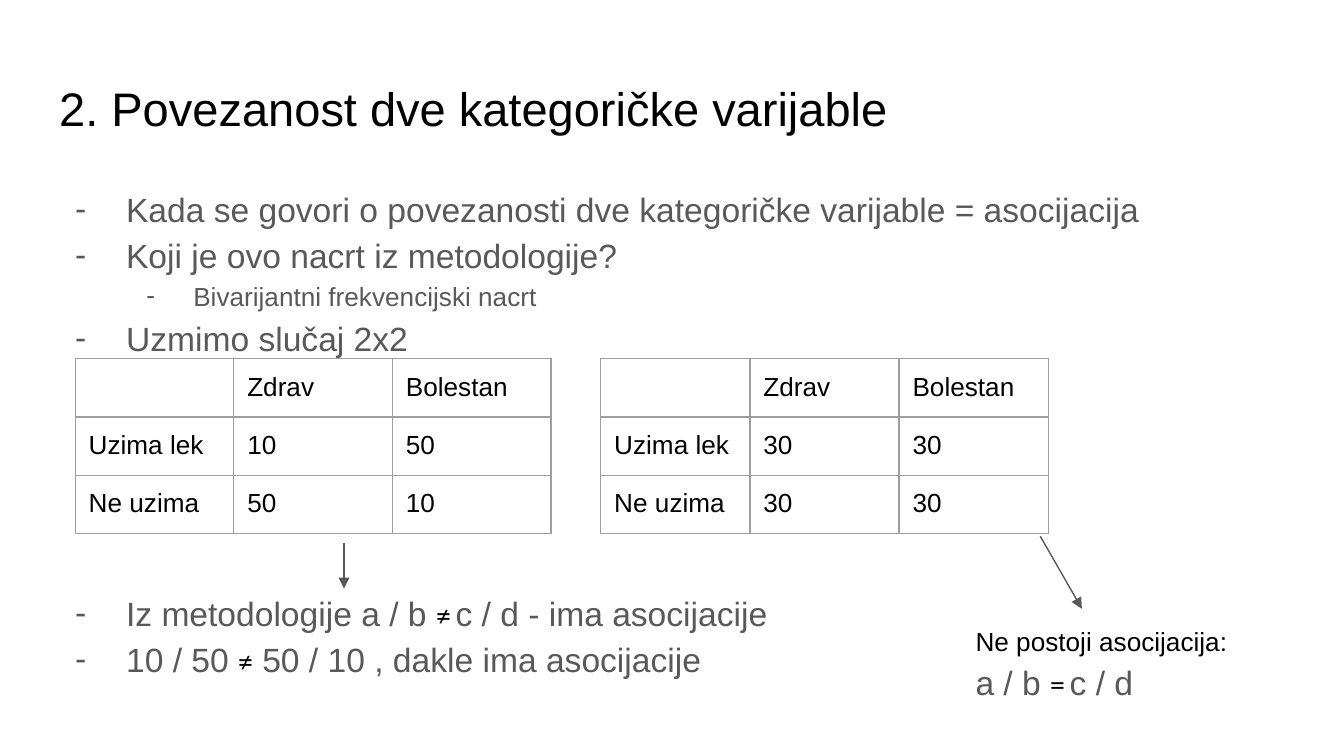
from dataclasses import dataclass

from lxml import etree
from pptx import Presentation
from pptx import util as u
from pptx.dml.color import RGBColor
from pptx.enum import shapes, text
from pptx.oxml import ns

COLORS = {"ink": "000000", "gray": "595959", "border": "9E9E9E"}


@dataclass(frozen=True)
class Span:
    words: str
    size: float = 18
    color: str = "gray"
    font: str = "Arial"


@dataclass(frozen=True)
class Line:
    spans: tuple[Span, ...]
    indent: float = 0
    hanging: float = 0
    spacing: float = 1.15
    before: float = 0
    after: float = 0


@dataclass(frozen=True)
class Grid:
    left: float
    column: float
    rows: tuple[tuple[str, ...], ...]


@dataclass(frozen=True)
class Arrow:
    start: tuple[float, float]
    end: tuple[float, float]


def bullet(*spans: Span, before: float = 0) -> Line:
    return Line(spans, 0.5, 0.38, before=before)


def symbol(sign: str) -> Span:
    return Span(sign, 16, "ink", "Calibri")


def frequencies(top: tuple[str, str], bottom: tuple[str, str]) -> tuple[tuple[str, ...], ...]:
    return ("", "Zdrav", "Bolestan"), ("Uzima lek", *top), ("Ne uzima", *bottom)


GAP = Span(" ", 11, "ink", "Calibri")
TITLE = Line((Span("2. Povezanost dve kategoričke varijable", 25.2, "ink"),), spacing=1)
BODY = (
    bullet(Span("Kada se govori o povezanosti dve kategoričke varijable = asocijacija")),
    bullet(Span("Koji je ovo nacrt iz metodologije?")),
    Line((Span("Bivarijantni frekvencijski nacrt", 14),), 1, 0.35),
    bullet(Span("Uzmimo slučaj 2x2")),
    bullet(Span("Iz metodologije a / b "), symbol("≠"), GAP,
           Span("c / d - ima asocijacije"), before=122.5),
    bullet(Span("10 / 50 "), symbol("≠"), Span(" 50 / 10 , dakle ima asocijacije")),
)
CONCLUSION = (
    Line((Span("Ne postoji asocijacija:", 14, "ink"),), spacing=1),
    Line((Span("a / b "), symbol("="), GAP, Span("c / d")), after=12),
)
GRIDS = (
    Grid(0.56, 1.18, frequencies(("10", "50"), ("50", "10"))),
    Grid(4.47, 1.11, frequencies(("30", "30"), ("30", "30"))),
)
ARROWS = (Arrow((2.56, 4.04), (2.56, 4.38)), Arrow((7.74, 3.99), (8.05, 4.53)))


def add_xml(parent, tag: str, **attributes: str):
    return etree.SubElement(parent, ns.qn(tag), attributes)


def write_line(para, line: Line) -> None:
    para.alignment = text.PP_ALIGN.LEFT
    para.line_spacing = line.spacing
    para.space_before = u.Pt(line.before)
    para.space_after = u.Pt(line.after)
    if line.hanging:
        properties = para._p.get_or_add_pPr()
        properties.set("marL", str(u.Inches(line.indent)))
        properties.set("indent", str(-u.Inches(line.hanging)))
        add_xml(add_xml(properties, "a:buClr"), "a:srgbClr", val=COLORS["gray"])
        add_xml(properties, "a:buFont", typeface="Arial")
        add_xml(properties, "a:buChar", char="-")
    for span in line.spans:
        run = para.add_run()
        run.text = span.words
        run.font.name = span.font
        run.font.size = u.Pt(span.size)
        run.font.color.rgb = RGBColor.from_string(COLORS[span.color])


def set_margins(target, inches: float) -> None:
    target.margin_left = target.margin_right = u.Inches(inches)
    target.margin_top = target.margin_bottom = u.Inches(inches)


def fill_frame(frame, lines: tuple[Line, ...]) -> None:
    frame.word_wrap = True
    frame.auto_size = text.MSO_AUTO_SIZE.NONE
    frame.vertical_anchor = text.MSO_ANCHOR.TOP
    set_margins(frame, 0.1)
    for index, line in enumerate(lines):
        write_line(frame.add_paragraph() if index else frame.paragraphs[0], line)


def add_text(slide, left: float, top: float, width: float, height: float,
             lines: tuple[Line, ...]) -> None:
    box = slide.shapes.add_textbox(*map(u.Inches, (left, top, width, height)))
    fill_frame(box.text_frame, lines)


def add_borders(cell) -> None:
    properties = cell._tc.get_or_add_tcPr()
    for position, side in enumerate(("a:lnL", "a:lnR", "a:lnT", "a:lnB")):
        border = etree.Element(ns.qn(side), w=str(u.Pt(0.75)))
        add_xml(add_xml(border, "a:solidFill"), "a:srgbClr", val=COLORS["border"])
        properties.insert(position, border)


def add_grid(slide, grid: Grid) -> None:
    count = len(grid.rows)
    size = u.Inches(grid.column * count), u.Inches(1.3)
    table = slide.shapes.add_table(count, count, u.Inches(grid.left), u.Inches(2.67), *size).table
    table.first_row = table.horz_banding = False
    for row, values in enumerate(grid.rows):
        for column, value in enumerate(values):
            cell = table.cell(row, column)
            cell.fill.background()
            set_margins(cell, 0.1 if value else 0)
            if value:
                label = Line((Span(value, 14, "ink"),), spacing=1)
                write_line(cell.text_frame.paragraphs[0], label)
            add_borders(cell)


def add_arrow(slide, arrow: Arrow) -> None:
    ends = map(u.Inches, (*arrow.start, *arrow.end))
    connector = slide.shapes.add_connector(shapes.MSO_CONNECTOR.STRAIGHT, *ends)
    connector.line.color.rgb = RGBColor.from_string(COLORS["gray"])
    connector.line.width = u.Pt(0.75)
    add_xml(connector.line._get_or_add_ln(), "a:tailEnd", type="triangle", w="med", len="med")
    add_xml(connector._element.spPr, "a:effectLst")


def main() -> None:
    deck = Presentation()
    deck.slide_width = u.Inches(10)
    deck.slide_height = deck.slide_width * 9 // 16
    page = deck.slides.add_slide(deck.slide_layouts[5])
    title = page.shapes.title
    title.left, title.top, title.width, title.height = map(u.Inches, (0.34, 0.49, 9.32, 0.63))
    fill_frame(title.text_frame, (TITLE,))
    add_text(page, 0.34, 1.26, 9.57, 4.17, BODY)
    for grid, arrow in zip(GRIDS, ARROWS):
        add_grid(page, grid)
        add_arrow(page, arrow)
    add_text(page, 7.16, 4.55, 2.41, 0.74, CONCLUSION)
    deck.save("out.pptx")


if __name__ == "__main__":
    main()
